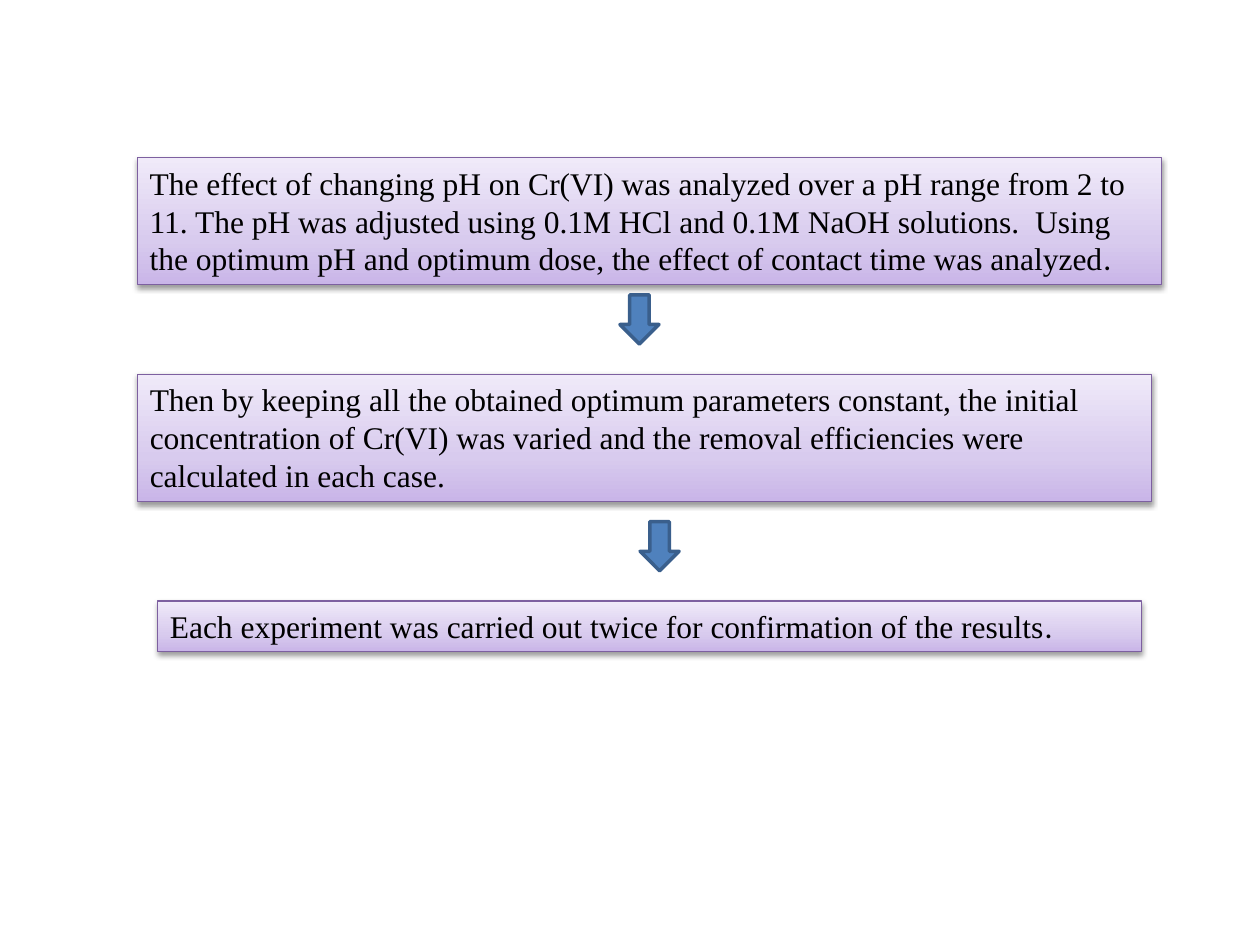
import lxml.etree
import pptx
import pptx.dml.color
import pptx.enum.shapes
import pptx.enum.text
import pptx.oxml.ns
import pptx.util

Inches = pptx.util.Inches
Pt = pptx.util.Pt
color = pptx.dml.color.RGBColor.from_string
qn = pptx.oxml.ns.qn

theme = {
    "ink": "000000",
    "edge": "7D60A0",
    "arrow": "4F81BD",
    "rim": "3A5F8C",
    "fade": [(0, "C9B5E8"), (35, "D8CBEE"), (100, "F0EAF9")],
    "shade": "000000",
    "size": 18,
    "font": "Times New Roman",
    "stop": "Calibri",
}


def tint(parent, value):
    return lxml.etree.SubElement(parent, qn("a:srgbClr"), val=value)


deck = pptx.Presentation()
deck.slide_width = Inches(10)
deck.slide_height = Inches(7.5)
slide = deck.slides.add_slide(deck.slide_layouts[6])

# Step boxes: left, top, width, height, then runs of text and font
steps = [
    (1.09, 1.25, 8.13, 1.01, [
        ("The effect of changing pH on Cr(VI) was analyzed over a pH range "
         "from 2 to 11. The pH was adjusted using 0.1M HCl and 0.1M NaOH "
         "solutions.  Using the optimum pH and optimum dose, the effect of "
         "contact time was analyzed", "font"),
        (".", "stop")]),
    (1.09, 2.97, 8.05, 1.01, [
        ("Then by keeping all the obtained optimum parameters constant, the "
         "initial concentration of Cr(VI) was varied and the removal "
         "efficiencies were calculated in each case.", "font")]),
    (1.25, 4.77, 7.81, 0.4, [
        ("Each experiment was carried out twice for confirmation of the "
         "results", "font"),
        (".", "stop")]),
]
for left, top, width, height, runs in steps:
    box = slide.shapes.add_textbox(
        Inches(left), Inches(top), Inches(width), Inches(height))
    box.line.color.rgb = color(theme["edge"])
    box.line.width = Pt(0.75)

    # Three-stop gradient, rising from dark to light
    box.fill.gradient()
    box.fill.gradient_angle = 90
    fade = box.element.spPr.find(".//" + qn("a:gsLst"))
    fade.clear()
    for place, value in theme["fade"]:
        tint(lxml.etree.SubElement(fade, qn("a:gs"), pos=str(place * 1000)),
             value)

    # Soft shadow straight below
    box.shadow.inherit = False
    cast = lxml.etree.SubElement(
        box.element.spPr.find(qn("a:effectLst")), qn("a:outerShdw"),
        blurRad="40000", dist="20000", dir="5400000", rotWithShape="0")
    lxml.etree.SubElement(
        tint(cast, theme["shade"]), qn("a:alpha"), val="38000")

    # Text
    frame = box.text_frame
    frame.word_wrap = True
    frame.auto_size = pptx.enum.text.MSO_AUTO_SIZE.SHAPE_TO_FIT_TEXT
    for words, face in runs:
        run = frame.paragraphs[0].add_run()
        run.text = words
        looks = {"name": theme[face], "size": Pt(theme["size"])}
        for key, value in looks.items():
            setattr(run.font, key, value)
        run.font.color.rgb = color(theme["ink"])

# Arrows between the steps
for left, top in [(4.92, 2.34), (5.08, 4.14)]:
    arrow = slide.shapes.add_shape(
        pptx.enum.shapes.MSO_SHAPE.DOWN_ARROW,
        Inches(left), Inches(top), Inches(0.31), Inches(0.39))
    arrow.shadow.inherit = False
    arrow.fill.solid()
    arrow.fill.fore_color.rgb = color(theme["arrow"])
    arrow.line.color.rgb = color(theme["rim"])
    arrow.line.width = Pt(2)

deck.save("out.pptx")
